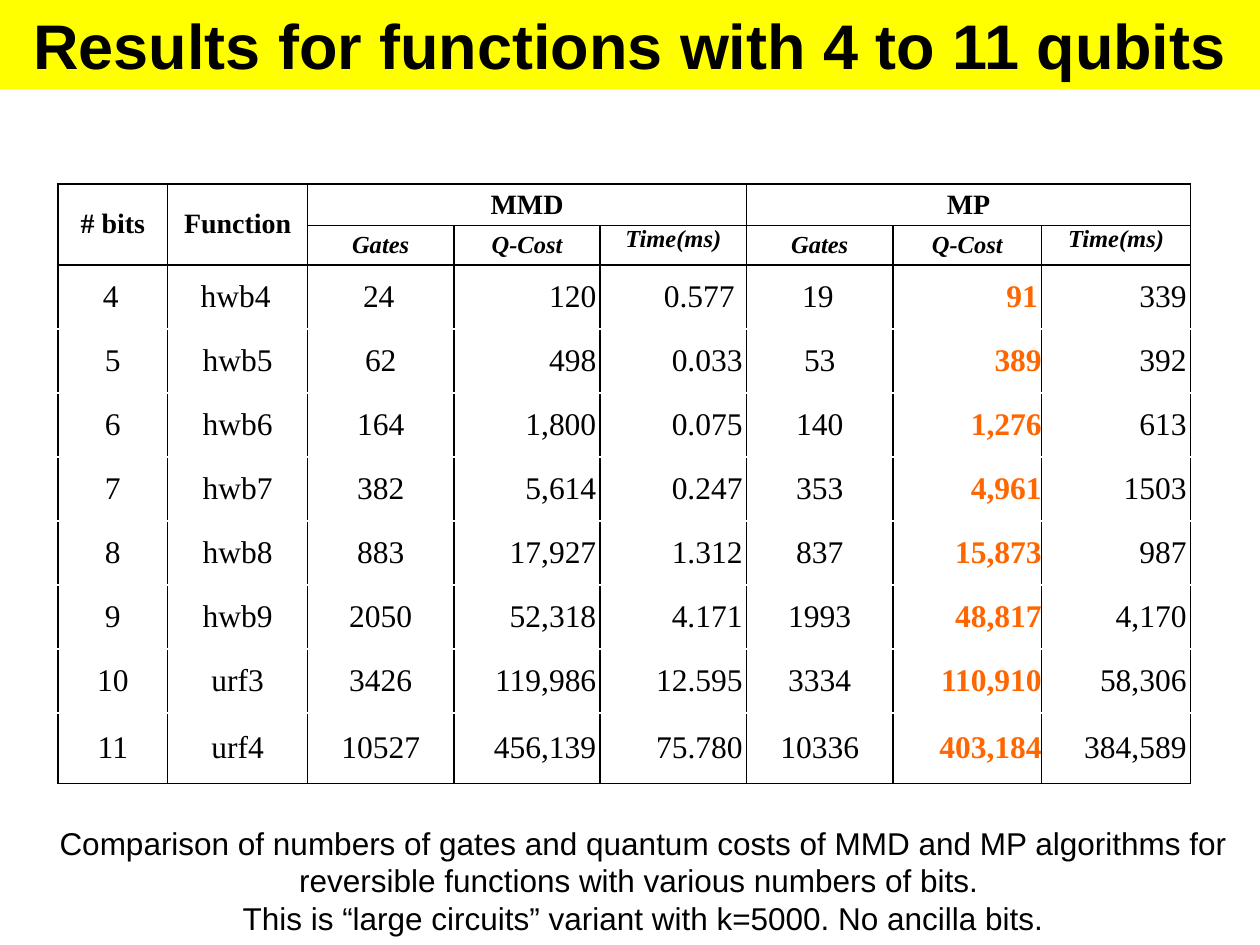
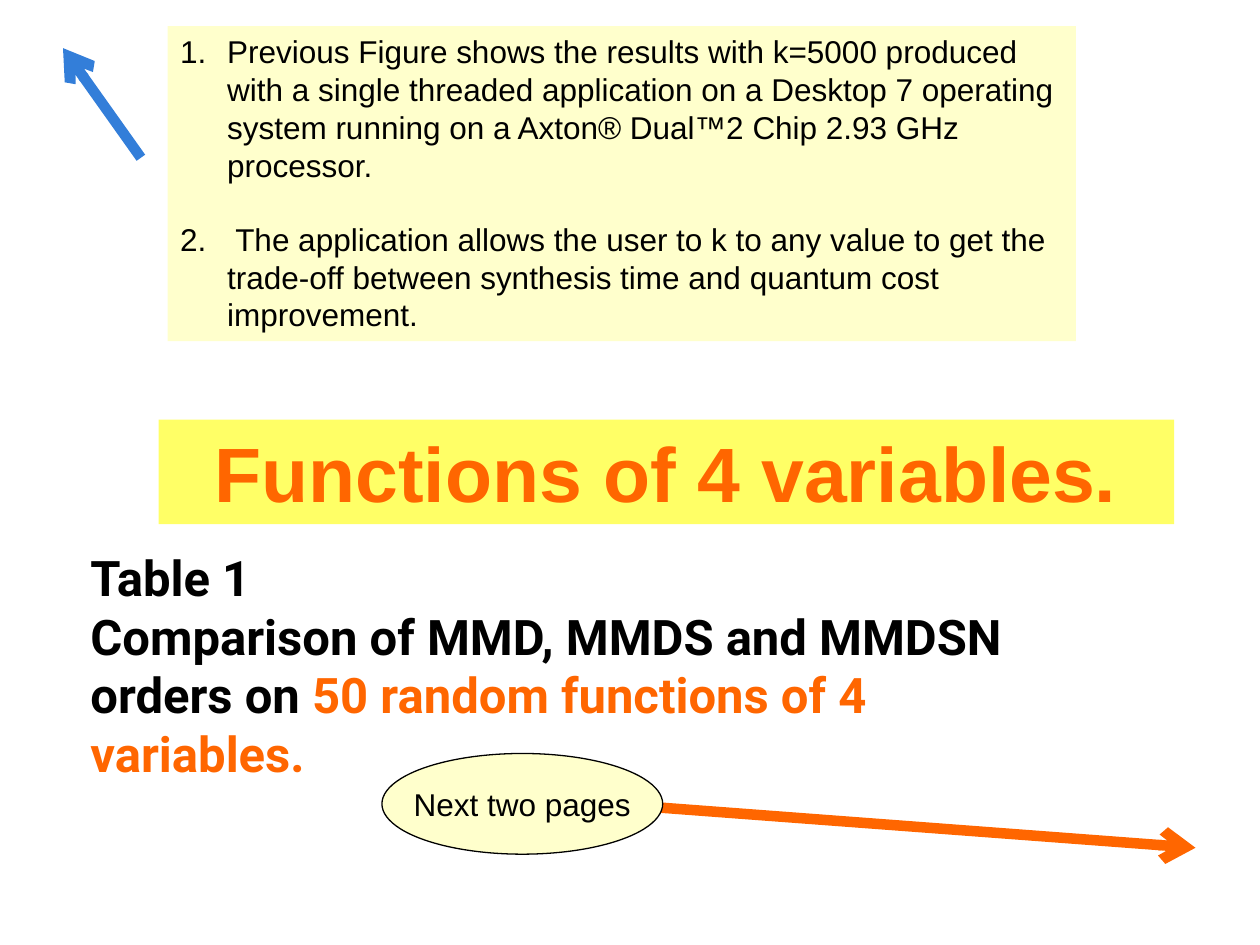
"""Build two slides on reversible function synthesis results."""
from lxml.etree import SubElement
from pptx import Presentation
from pptx.dml.color import RGBColor
from pptx.enum.shapes import MSO_CONNECTOR as Connector, MSO_SHAPE as Shape
from pptx.enum.text import MSO_ANCHOR as Anchor, MSO_AUTO_SIZE as AutoSize, PP_ALIGN as Align
from pptx.oxml.ns import qn
from pptx.util import Cm, Pt

COLORS = {
    "black": "000000",
    "orange": "FF6600",
    "blue": "337ED9",
    "title band": "FFFF00",
    "heading band": "FFFF66",
    "note": "FFFFCC",
}
TITLE_ONLY = 5


def format_text(paragraph, size, color="black", bold=False, italic=False, font="Arial", align=Align.LEFT):
    paragraph.alignment = align
    for run in paragraph.runs:
        run.font.name = font
        run.font.size = Pt(size)
        run.font.bold = bold
        run.font.italic = italic
        run.font.color.rgb = RGBColor.from_string(COLORS[color])


def place(shape, box, fill=None, anchor=Anchor.TOP):
    shape.left, shape.top, shape.width, shape.height = [Cm(length) for length in box]
    shape.text_frame.auto_size = AutoSize.NONE
    shape.text_frame.word_wrap = True
    shape.text_frame.vertical_anchor = anchor
    if fill:
        shape.fill.solid()
        shape.fill.fore_color.rgb = RGBColor.from_string(COLORS[fill])
    return shape


presentation = Presentation()
presentation.slide_width = Cm(25.4)
presentation.slide_height = Cm(19.05)
layout = presentation.slide_layouts[TITLE_ONLY]

slide = presentation.slides.add_slide(layout)
title = place(slide.shapes.title, (0, 0, 25.4, 1.8), "title band")
title.text_frame.text = "Results for functions with 4 to 11 qubits"
format_text(title.text_frame.paragraphs[0], 36, bold=True, align=Align.CENTER)

measures = ["Gates", "Q-Cost", "Time(ms)"]
rows = [
    ["# bits", "Function", "MMD", "", "", "MP", "", ""],
    ["", "", *measures, *measures],
    ["4", "hwb4", "24", "120", "0.577 ", "19", "91", "339"],
    ["5", "hwb5", "62", "498", "0.033", "53", "389", "392"],
    ["6", "hwb6", "164", "1,800", "0.075", "140", "1,276", "613"],
    ["7", "hwb7", "382", "5,614", "0.247", "353", "4,961", "1503"],
    ["8", "hwb8", "883", "17,927", "1.312", "837", "15,873", "987"],
    ["9", "hwb9", "2050", "52,318", "4.171", "1993", "48,817", "4,170"],
    ["10", "urf3", "3426", "119,986", "12.595", "3334", "110,910", "58,306"],
    ["11", "urf4", "10527", "456,139", "75.780", "10336", "403,184", "384,589"],
]
column_widths = [2.21, 2.82, 2.95, 2.95, 2.95, 2.95, 3, 3]
row_heights = [0.84, 0.79] + [1.29] * 7 + [1.42]
right_aligned = {3, 4, 6, 7}
mp_cost_column = 6
first_data_row, last_row = 2, len(rows) - 1

frame = slide.shapes.add_table(
    len(rows), len(column_widths), Cm(1.17), Cm(3.71), Cm(sum(column_widths)), Cm(sum(row_heights)))
table = frame.table
table.first_row = False
table.horz_banding = False
for column, width in zip(table.columns, column_widths):
    column.width = Cm(width)
for row, height in zip(table.rows, row_heights):
    row.height = Cm(height)
for column_index in (0, 1):
    table.cell(0, column_index).merge(table.cell(1, column_index))
for column_index in (2, 5):
    table.cell(0, column_index).merge(table.cell(0, column_index + 2))

for row_index, values in enumerate(rows):
    for column_index, value in enumerate(values):
        cell = table.cell(row_index, column_index)
        is_data = row_index >= first_data_row
        is_number = is_data and column_index in right_aligned
        is_mp_cost = is_data and column_index == mp_cost_column
        cell.margin_left = cell.margin_top = cell.margin_bottom = cell.margin_right = 0
        if row_index == first_data_row or (is_number and not is_mp_cost):
            cell.margin_right = Cm(0.08)
        cell.vertical_anchor = Anchor.TOP if value == "Time(ms)" else Anchor.MIDDLE

        edges = ["a:lnL", "a:lnR"]
        if row_index <= first_data_row:
            edges.append("a:lnT")
        if row_index < first_data_row or row_index == last_row:
            edges.append("a:lnB")
        properties = cell._tc.get_or_add_tcPr()
        for edge in edges:
            line = SubElement(properties, qn(edge), w=str(Pt(1)))
            SubElement(SubElement(line, qn("a:solidFill")), qn("a:srgbClr"), val=COLORS["black"])
        cell.fill.background()

        if value:
            cell.text_frame.text = value
            format_text(
                cell.text_frame.paragraphs[0],
                18 if is_data else (16, 14)[row_index],
                color="orange" if is_mp_cost else "black",
                bold=is_mp_cost or not is_data,
                italic=row_index == 1,
                font="Times New Roman",
                align=Align.RIGHT if is_number else Align.CENTER,
            )

caption = place(slide.shapes.add_textbox(0, 0, 0, 0), (0.53, 16.48, 24.87, 2.57))
caption.text_frame.text = (
    "Comparison of numbers of gates and quantum costs of MMD and MP algorithms for "
    "reversible functions with various numbers of bits. \n"
    "This is “large circuits” variant with k=5000. No ancilla bits.")
for paragraph in caption.text_frame.paragraphs:
    format_text(paragraph, 18, align=Align.CENTER)

slide = presentation.slides.add_slide(layout)
title = place(slide.shapes.title, (1.57, 10.39, 20.32, 7.19), anchor=Anchor.MIDDLE)
title.text_frame.margin_bottom = Cm(1.29)
paragraph = title.text_frame.paragraphs[0]
paragraph.text = "Table 1 \vComparison of MMD, MMDS and MMDSN orders on "
highlight = paragraph.add_run()
highlight.text = "50 random functions of 4 variables."
format_text(paragraph, 28, bold=True, font="Roboto")
highlight.font.color.rgb = RGBColor.from_string(COLORS["orange"])

notes_box = slide.shapes.add_shape(Shape.RECTANGLE, 0, 0, 0, 0)
place(notes_box, (3.38, 0.53, 18.31, 6.35), "note")
notes_box.text_frame.text = (
    "Previous Figure shows the results with k=5000 produced with a single threaded "
    "application on a Desktop 7 operating system running on a Axton® Dual™2 Chip 2.93 "
    "GHz processor.\n"
    " The application allows the user to k to any value to get the trade-off between "
    "synthesis time and quantum cost improvement.")
for paragraph in notes_box.text_frame.paragraphs:
    properties = paragraph._p.get_or_add_pPr()
    properties.set("marL", str(Cm(0.95)))
    properties.set("indent", str(-Cm(0.95)))
    SubElement(properties, qn("a:buAutoNum"), type="arabicPeriod")
    format_text(paragraph, 18)
notes_box.text_frame.paragraphs[1].space_before = Pt(20.7)

arrows = [
    ("blue", 2.84, 3.18, 1.27, 0.97),
    ("orange", 8.64, 15.93, 24.1, 17.09),
]
for color, *ends in arrows:
    arrow = slide.shapes.add_connector(Connector.STRAIGHT, *[Cm(length) for length in ends])
    arrow.line.width = Pt(6)
    arrow.line.color.rgb = RGBColor.from_string(COLORS[color])
    properties = arrow.element.spPr
    SubElement(properties.find(qn("a:ln")), qn("a:tailEnd"), type="arrow")
    SubElement(properties, qn("a:effectLst"))

pointer = slide.shapes.add_shape(Shape.OVAL, 0, 0, 0, 0)
place(pointer, (7.7, 15.19, 5.66, 2.03), "note", Anchor.MIDDLE)
pointer.text_frame.word_wrap = False
pointer.text_frame.text = "Next two pages"
format_text(pointer.text_frame.paragraphs[0], 18, align=Align.CENTER)

heading = slide.shapes.add_shape(Shape.RECTANGLE, 0, 0, 0, 0)
place(heading, (3.2, 8.46, 20.47, 2.11), "heading band")
heading.text_frame.text = "Functions of 4 variables."
format_text(heading.text_frame.paragraphs[0], 44, "orange", bold=True, align=Align.CENTER)

for shape in (notes_box, pointer, heading):
    shape.shadow.inherit = False
    shape.line.fill.background()
pointer.line.color.rgb = RGBColor.from_string(COLORS["black"])
pointer.line.width = Pt(0.75)

presentation.save("out.pptx")
